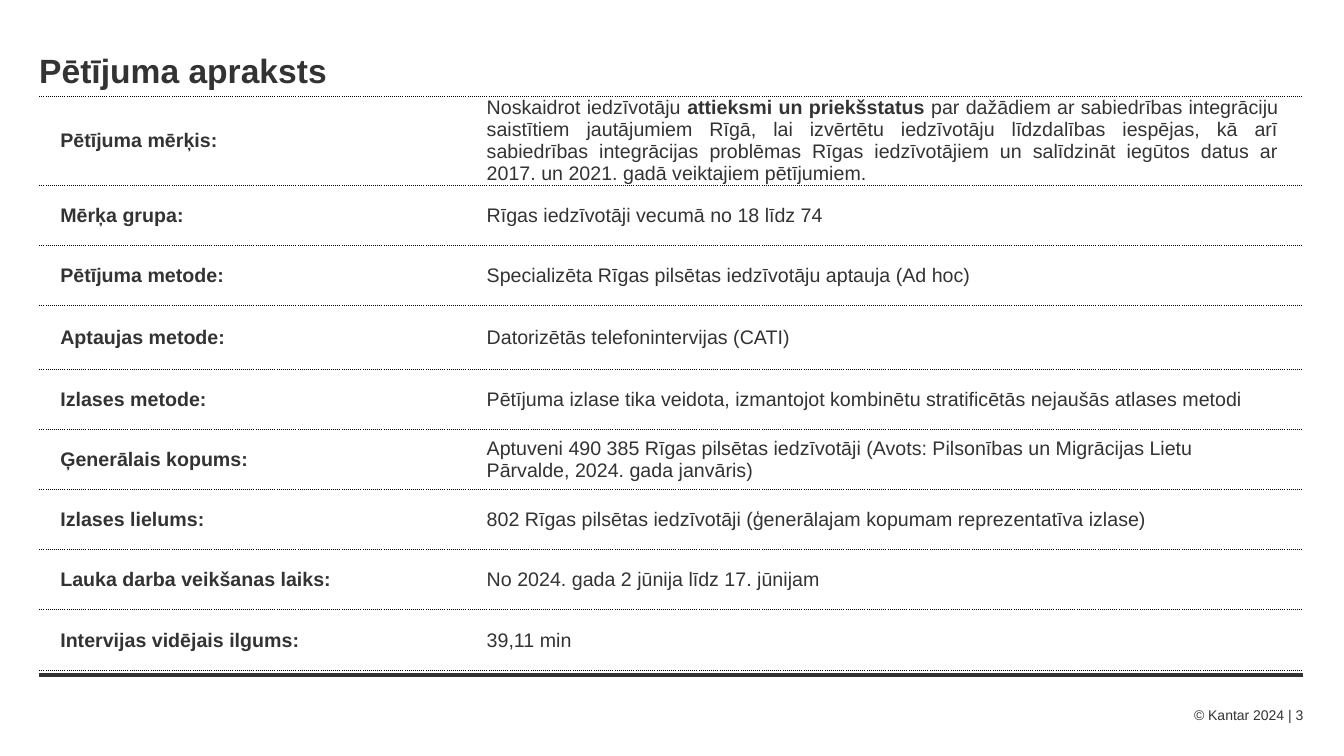
import pptx
import pptx.util
import pptx.dml.color
import pptx.enum.shapes
import pptx.enum.text
import pptx.oxml
import pptx.oxml.ns
import lxml.etree

Pt = pptx.util.Pt
ALIGN = pptx.enum.text.PP_ALIGN
MIDDLE = pptx.enum.text.MSO_ANCHOR.MIDDLE

THEME = {
    "font": "Arial",
    "ink": pptx.dml.color.RGBColor(0x33, 0x33, 0x33),
    "rule": "000000",
    "title": Pt(24),
    "body": Pt(14),
    "foot": Pt(10),
}
LEFT, WIDTH = 28, 903
COLS = (319, 567, 17)
ROW = 43
TALL = {0: 63.5, 3: 45.5}
ROWS = [
    ("Pētījuma mērķis:", [
        ("Noskaidrot iedzīvotāju ", False),
        ("attieksmi un priekšstatus ", True),
        ("par dažādiem ar sabiedrības integrāciju saistītiem jautājumiem Rīgā, "
         "lai izvērtētu iedzīvotāju līdzdalības iespējas, kā arī sabiedrības "
         "integrācijas problēmas Rīgas iedzīvotājiem un salīdzināt iegūtos datus "
         "ar 2017. un 2021. gadā veiktajiem pētījumiem.", False)]),
    ("Mērķa grupa:", [("Rīgas iedzīvotāji vecumā no 18 līdz 74", False)]),
    ("Pētījuma metode:", [
        ("Specializēta Rīgas pilsētas iedzīvotāju aptauja (Ad hoc)", False)]),
    ("Aptaujas metode:", [("Datorizētās telefonintervijas (CATI)", False)]),
    ("Izlases metode:", [
        ("Pētījuma izlase tika veidota, izmantojot kombinētu stratificētās "
         "nejaušās atlases metodi", False)]),
    ("Ģenerālais kopums:", [
        ("Aptuveni 490 385 Rīgas pilsētas iedzīvotāji (Avots: Pilsonības un "
         "Migrācijas Lietu Pārvalde, 2024. gada janvāris)", False)]),
    ("Izlases lielums:", [
        ("802 Rīgas pilsētas iedzīvotāji (ģenerālajam kopumam reprezentatīva "
         "izlase)", False)]),
    ("Lauka darba veikšanas laiks:", [
        ("No 2024. gada 2 jūnija līdz 17. jūnijam", False)]),
    ("Intervijas vidējais ilgums:", [("39,11 min", False)]),
]


def apply(item, values):
    for name, value in values.items():
        setattr(item, name, value)


def write(para, runs, size, align=ALIGN.LEFT):
    para.alignment = align
    for text, bold in runs:
        run = para.add_run()
        run.text = text
        apply(run.font, {"name": THEME["font"], "size": size, "bold": bold})
        run.font.color.rgb = THEME["ink"]


def frame(shape, box):
    apply(shape, dict(zip(("left", "top", "width", "height"), map(Pt, box))))
    text = shape.text_frame
    apply(text, {"margin_left": 0, "margin_top": 0, "margin_right": 0,
                 "margin_bottom": 0, "word_wrap": True,
                 "vertical_anchor": MIDDLE,
                 "auto_size": pptx.enum.text.MSO_AUTO_SIZE.NONE})
    return text.paragraphs[0]


def border(cell):
    space = pptx.oxml.ns.nsdecls("a")
    none = "<a:noFill/>"
    dots = (f'<a:solidFill><a:srgbClr val="{THEME["rule"]}"/></a:solidFill>'
            '<a:prstDash val="sysDot"/>')
    props = cell._tc.get_or_add_tcPr()
    sides = (("L", none), ("R", none), ("T", dots), ("B", dots))
    for place, (side, paint) in enumerate(sides):
        xml = f'<a:ln{side} {space} w="{Pt(0.5)}">{paint}</a:ln{side}>'
        props.insert(place, pptx.oxml.parse_xml(xml))


def grid(slide):
    tops = [TALL.get(i, ROW) for i in range(len(ROWS))]
    table = slide.shapes.add_table(
        len(ROWS), len(COLS), Pt(LEFT), Pt(68.5), Pt(WIDTH), Pt(sum(tops))).table
    apply(table, {"first_row": False, "horz_banding": False})
    for col, width in zip(table.columns, COLS):
        col.width = Pt(width)
    for row, height in zip(table.rows, tops):
        row.height = Pt(height)
    for cell in table.iter_cells():
        apply(cell, {"margin_left": Pt(0.7), "margin_top": Pt(0.7),
                     "margin_right": Pt(0.7), "margin_bottom": 0,
                     "vertical_anchor": MIDDLE})
        cell.fill.background()
        border(cell)
    for i, (label, runs) in enumerate(ROWS):
        head, value = (table.cell(i, j).text_frame.paragraphs[0] for j in (0, 1))
        head._p.get_or_add_pPr().set("marL", str(Pt(14.4)))
        write(head, [(label, True)], THEME["body"])
        write(value, runs, THEME["body"], ALIGN.LEFT if i else ALIGN.JUSTIFY)


def rule(slide, top):
    line = slide.shapes.add_connector(
        pptx.enum.shapes.MSO_CONNECTOR.STRAIGHT,
        Pt(LEFT), Pt(top), Pt(LEFT + WIDTH), Pt(top))
    line.line.color.rgb = THEME["ink"]
    line.line.width = Pt(3)
    lxml.etree.SubElement(line._element.spPr, pptx.oxml.ns.qn("a:effectLst"))


def main():
    deck = pptx.Presentation()
    apply(deck, {"slide_width": Pt(960), "slide_height": Pt(540)})
    slide = deck.slides.add_slide(deck.slide_layouts[5])
    rule(slide, 482)
    grid(slide)
    title = frame(slide.shapes.title, (LEFT, 34, WIDTH, 32))
    write(title, [("Pētījuma apraksts", True)], THEME["title"])
    note = slide.shapes.add_textbox(0, 0, 0, 0)
    foot = frame(note, (818, 503, 113, 16))
    write(foot, [("© Kantar 2024 | 3", False)], THEME["foot"], ALIGN.RIGHT)
    deck.save("out.pptx")


if __name__ == "__main__":
    main()
